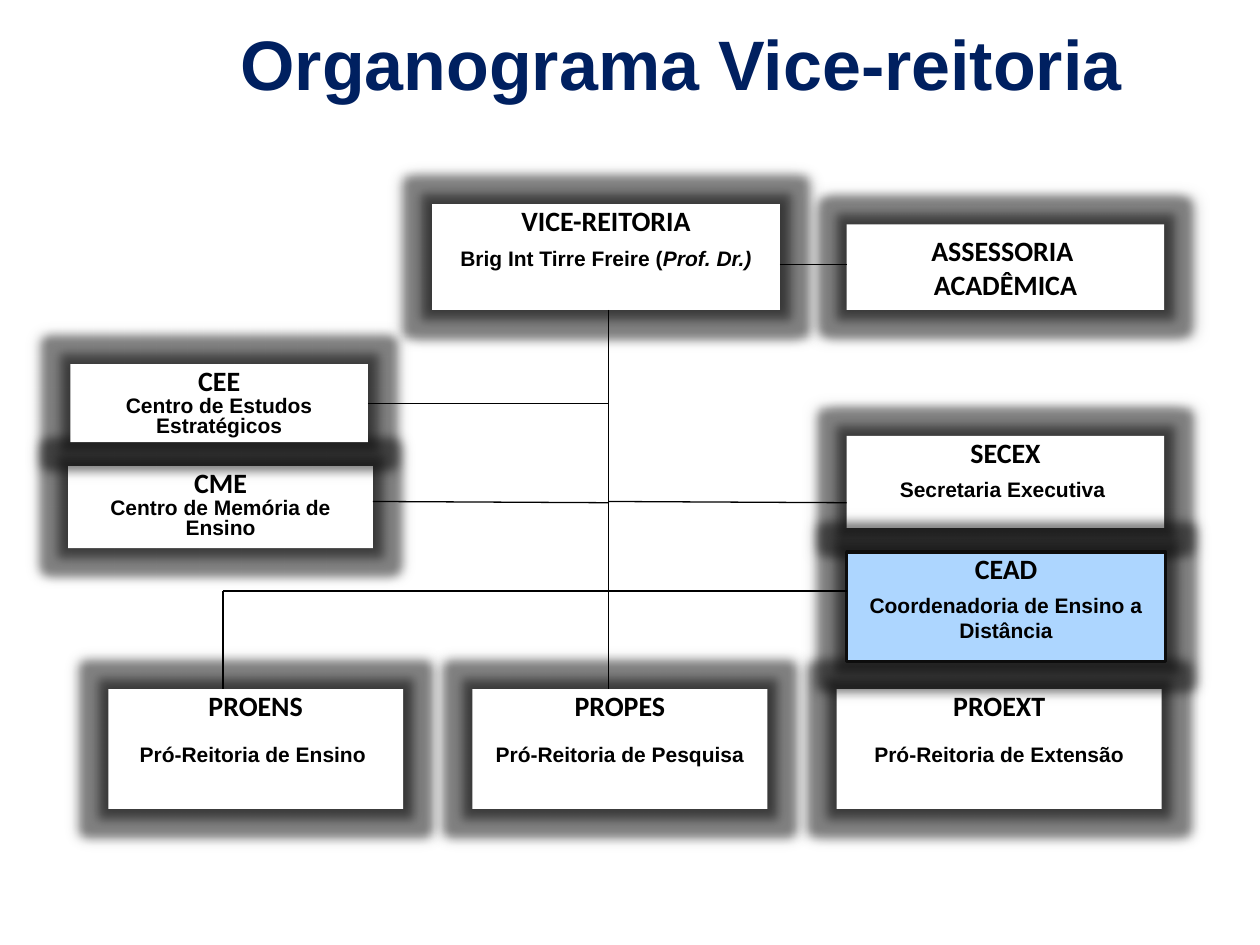
from collections import namedtuple

from lxml.etree import SubElement
from pptx import Presentation
from pptx.dml.color import RGBColor
from pptx.enum.shapes import MSO_CONNECTOR as CONNECTOR, MSO_SHAPE as SHAPE
from pptx.enum.text import MSO_ANCHOR as ANCHOR, PP_ALIGN as ALIGN
from pptx.oxml import parse_xml
from pptx.oxml.ns import nsdecls, qn
from pptx.util import Inches, Pt

NAVY = RGBColor(0x00, 0x20, 0x60)
BLACK = RGBColor(0x00, 0x00, 0x00)
NEAR_BLACK = RGBColor(0x0D, 0x0D, 0x0D)
WHITE = RGBColor(0xFF, 0xFF, 0xFF)
LIGHT_BLUE = RGBColor(0xAD, 0xD6, 0xFF)

Box = namedtuple("Box", "left top width height")
Spacing = namedtuple("Spacing", "after_acronym before_detail detail_line")
COMPACT = Spacing(0, 0, 0.8)
STAFF = Spacing(4.5, 0, 1)
OPEN = Spacing(4.5, 9, 0.8)

TRUNK_X = 4.83
BRANCH_Y = 4.69
PRO_TOP, PRO_HEIGHT = 5.47, 0.95
RIGHT_X = 6.72

HALO = f"""<a:effectLst {nsdecls('a')}>
<a:glow rad="139700"><a:srgbClr val="000000"><a:alpha val="40000"/></a:srgbClr></a:glow>
<a:outerShdw blurRad="63500" sx="102000" sy="102000" algn="ctr" rotWithShape="0">
<a:srgbClr val="000000"><a:alpha val="40000"/></a:srgbClr></a:outerShdw>
</a:effectLst>"""


def inches(box):
    return [Inches(length) for length in box]


def style(paragraph, font_name, size, color=BLACK):
    paragraph.alignment = ALIGN.CENTER
    font = paragraph.font
    font.name, font.size, font.bold = font_name, Pt(size), True
    font.color.rgb = color


def add_title(slide, box, text):
    title = slide.shapes.title
    title.left, title.top, title.width, title.height = inches(box)
    frame = title.text_frame
    frame.text = text
    frame.word_wrap = True
    frame.vertical_anchor = ANCHOR.MIDDLE
    style(frame.paragraphs[0], "Arial", 40, NAVY)


def add_box(slide, box, fill=WHITE, anchor=ANCHOR.TOP):
    """Add a rectangle with a dark halo around it."""
    unit = slide.shapes.add_shape(SHAPE.RECTANGLE, *inches(box))
    unit.fill.solid()
    unit.fill.fore_color.rgb = fill
    unit.line.fill.background()
    unit._element.spPr.append(parse_xml(HALO))
    unit.text_frame.word_wrap = True
    unit.text_frame.vertical_anchor = anchor
    return unit


def add_unit(slide, box, acronym, detail, spacing, fill=WHITE, italic_end=""):
    """Add a unit with its acronym above its full name or its head."""
    unit = add_box(slide, box, fill)
    heading = unit.text_frame.paragraphs[0]
    heading.text = acronym
    heading.line_spacing = 0.8
    heading.space_after = Pt(spacing.after_acronym)
    style(heading, "Calibri", 16)

    description = unit.text_frame.add_paragraph()
    description.text = detail
    description.line_spacing = spacing.detail_line
    description.space_before = Pt(spacing.before_detail)
    style(description, "Arial", 12)
    if italic_end:
        ending = description.add_run()
        ending.text = italic_end
        ending.font.italic = True
    return unit


def add_advisory(slide, box, lines):
    advisory = add_box(slide, box, anchor=ANCHOR.MIDDLE)
    frame = advisory.text_frame
    frame.text = "\n".join(lines)
    for paragraph in frame.paragraphs:
        style(paragraph, "Calibri", 16)


def add_link(slide, x1, y1, x2, y2):
    link = slide.shapes.add_connector(
        CONNECTOR.STRAIGHT, Inches(x1), Inches(y1), Inches(x2), Inches(y2))
    link.line.color.rgb = BLACK
    link.line.width = Pt(0.75)
    SubElement(link._element.spPr, qn("a:effectLst"))
    return link


def main():
    prs = Presentation()
    prs.slide_width, prs.slide_height = Inches(10), Inches(7.5)
    slide = prs.slides.add_slide(prs.slide_layouts[5])

    add_title(slide, Box(0.84, 0.11, 9.13, 0.78), "Organograma Vice-reitoria")

    vice = Box(3.43, 1.62, 2.76, 0.84)
    add_unit(slide, vice, "VICE-REITORIA", "Brig Int Tirre Freire (", STAFF,
             italic_end="Prof. Dr.)")

    pro_rectories = [
        (0.86, 2.34, "PROENS", "Pró-Reitoria de Ensino "),
        (3.75, 2.34, "PROPES", "Pró-Reitoria de Pesquisa"),
        (6.64, 2.58, "PROEXT", "Pró-Reitoria de Extensão"),
    ]
    for left, width, acronym, detail in pro_rectories:
        add_unit(slide, Box(left, PRO_TOP, width, PRO_HEIGHT), acronym, detail, OPEN)

    add_unit(slide, Box(RIGHT_X, 3.46, 2.52, 0.73), "SECEX",
             "Secretaria Executiva ", STAFF)
    cme = Box(0.54, 3.7, 2.42, 0.65)
    add_unit(slide, cme, "CME", "Centro de Memória de Ensino", COMPACT)
    cee = add_unit(slide, Box(0.56, 2.89, 2.36, 0.62), "CEE",
                   "Centro de Estudos Estratégicos", COMPACT)
    cead = add_unit(slide, Box(RIGHT_X, 4.38, 2.53, 0.87), "CEAD",
                    "Coordenadoria de Ensino a Distância", STAFF, LIGHT_BLUE)
    cead.line.color.rgb = NEAR_BLACK
    cead.line.width = Pt(2)
    add_advisory(slide, Box(RIGHT_X, 1.78, 2.52, 0.68), ["ASSESSORIA ", "ACADÊMICA"])

    proens_x = 1.77
    add_link(slide, TRUNK_X, vice.top + vice.height, TRUNK_X, PRO_TOP)
    add_link(slide, vice.left + vice.width, 2.1, RIGHT_X, 2.1)
    add_link(slide, 2.92, 3.2, TRUNK_X, 3.2).begin_connect(cee, 3)
    add_link(slide, cme.left + cme.width, 3.98, TRUNK_X, 3.99)
    add_link(slide, TRUNK_X, 3.98, RIGHT_X, 3.99)
    add_link(slide, proens_x, BRANCH_Y, RIGHT_X, BRANCH_Y)
    add_link(slide, proens_x, BRANCH_Y, proens_x, PRO_TOP)

    prs.save("out.pptx")


if __name__ == "__main__":
    main()
